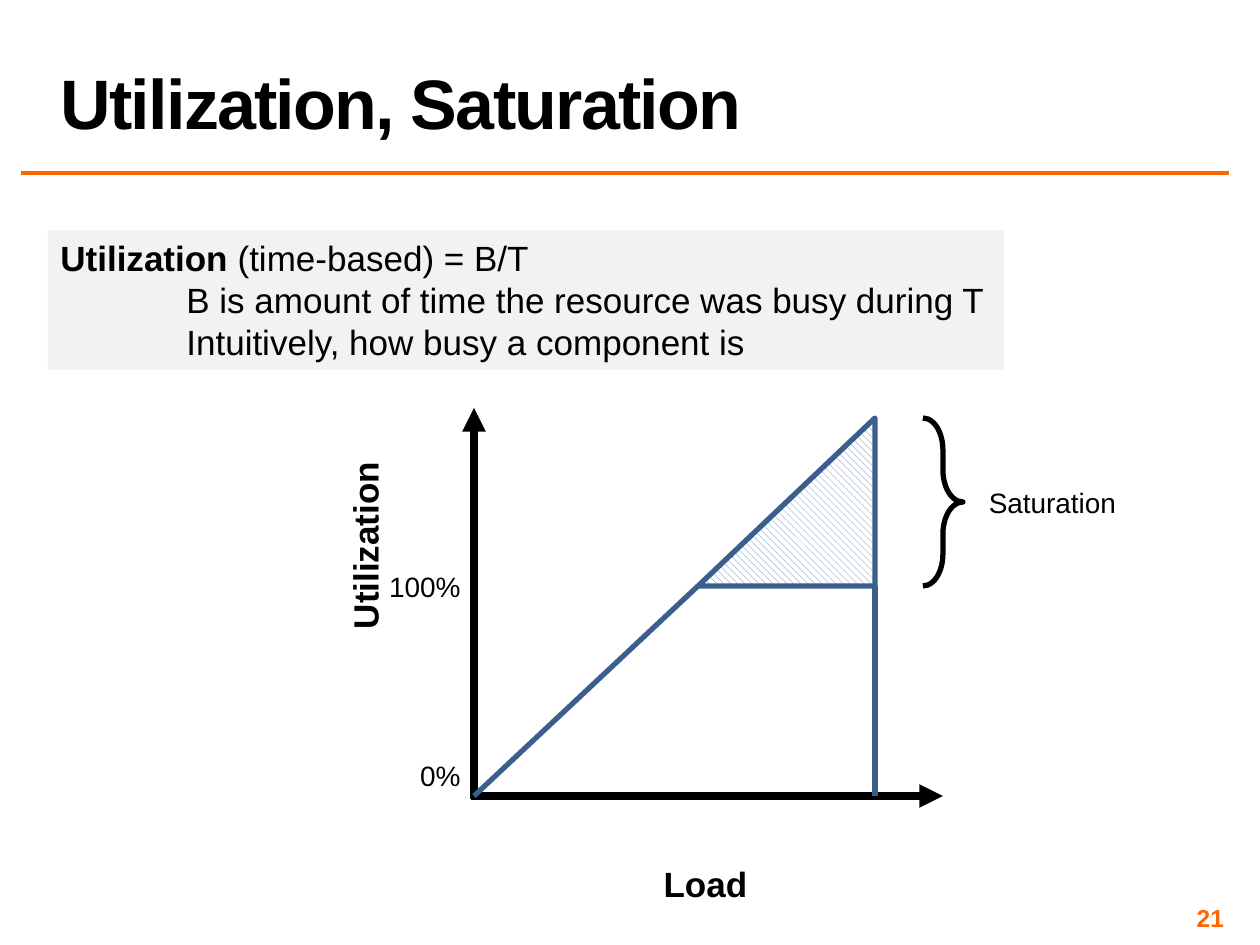
from lxml import etree
from pptx import Presentation
from pptx.dml.color import RGBColor
from pptx.enum.dml import MSO_PATTERN
from pptx.enum.shapes import MSO_CONNECTOR, MSO_SHAPE
from pptx.enum.text import MSO_ANCHOR, MSO_AUTO_SIZE, PP_ALIGN
from pptx.oxml.ns import qn
from pptx.util import Pt

PX = 914400 / 126
BLACK = RGBColor(0x00, 0x00, 0x00)
WHITE = RGBColor(0xFF, 0xFF, 0xFF)
ORANGE = RGBColor(0xFF, 0x66, 0x00)
BLUE = RGBColor(0x4F, 0x81, 0xBD)
DARK_BLUE = RGBColor(0x3A, 0x5F, 0x8C)
GRAY = RGBColor(0xF2, 0xF2, 0xF2)

presentation = Presentation()
presentation.slide_width = int(1260 * PX)
presentation.slide_height = int(945 * PX)
slide = presentation.slides.add_slide(presentation.slide_layouts[5])


def emu(*lengths):
    return [int(length * PX) for length in lengths]


def format_paragraph(paragraph, size, bold=False, color=BLACK, align=PP_ALIGN.LEFT):
    paragraph.alignment = align
    paragraph.font.name = "Arial"
    paragraph.font.size = Pt(size)
    paragraph.font.bold = bold
    paragraph.font.color.rgb = color


# Title
title = slide.shapes.title
title.left, title.top, title.width, title.height = emu(48, 2, 1181, 147)
title.text_frame.text = "Utilization, Saturation"
title.text_frame.vertical_anchor = MSO_ANCHOR.BOTTOM
title.text_frame.auto_size = MSO_AUTO_SIZE.NONE
title_paragraph = title.text_frame.paragraphs[0]
format_paragraph(title_paragraph, 40, bold=True)
title_paragraph.line_spacing = 0.8
title_paragraph.runs[0].font._element.set("spc", "-100")

# Title rule, axes and load lines
for start, end, color, width, arrow in (
    ((21, 173), (1229, 173), ORANGE, 2, False),
    ((474, 799), (474, 408), BLACK, 4.5, True),
    ((471, 796), (943, 796), BLACK, 4.5, True),
    ((474, 796), (698, 586), DARK_BLUE, 3, False),
    ((875, 796), (875, 586), DARK_BLUE, 3, False),
):
    connector = slide.shapes.add_connector(MSO_CONNECTOR.STRAIGHT, *emu(*start, *end))
    connector.line.color.rgb = color
    connector.line.width = Pt(width)
    if arrow:
        line = connector.line._get_or_add_ln()
        etree.SubElement(line, qn("a:tailEnd"), type="triangle")
    etree.SubElement(connector._element.spPr, qn("a:effectLst"))

# Saturation triangle and brace
triangle = slide.shapes.add_shape(MSO_SHAPE.ISOSCELES_TRIANGLE, *emu(698, 418, 177, 168))
triangle.adjustments[0] = 1
triangle.fill.patterned()
triangle.fill.pattern = MSO_PATTERN.WIDE_DOWNWARD_DIAGONAL
triangle.fill.fore_color.rgb = BLUE
triangle.fill.back_color.rgb = WHITE
triangle.line.color.rgb = DARK_BLUE

brace = slide.shapes.add_shape(MSO_SHAPE.LEFT_BRACE, *emu(923, 418, 40, 168))
brace.adjustments[0] = 0.8
brace._element.spPr.get_or_add_xfrm().set("flipH", "1")
brace.fill.background()
brace.line.color.rgb = BLACK

for shape in (triangle, brace):
    shape.line.width = Pt(3)
    shape.shadow.inherit = False

# Chart labels
for text, box, size, bold, align, rotation in (
    ("Utilization", (268, 518, 194, 55), 20, True, PP_ALIGN.CENTER, 270),
    ("Load", (651, 856, 109, 55), 20, True, PP_ALIGN.CENTER, 0),
    ("Saturation", (976, 479, 153, 47), 16, False, PP_ALIGN.CENTER, 0),
    ("100%", (375, 563, 98, 47), 16, False, PP_ALIGN.RIGHT, 0),
    ("0%", (406, 752, 67, 47), 16, False, PP_ALIGN.RIGHT, 0),
):
    label = slide.shapes.add_textbox(*emu(*box))
    label.rotation = rotation
    label.text_frame.text = text
    label.text_frame.word_wrap = False
    label.text_frame.auto_size = MSO_AUTO_SIZE.SHAPE_TO_FIT_TEXT
    format_paragraph(label.text_frame.paragraphs[0], size, bold, align=align)

# Definition
definition = slide.shapes.add_shape(MSO_SHAPE.RECTANGLE, *emu(48, 230, 956, 140))
definition.shadow.inherit = False
definition.fill.solid()
definition.fill.fore_color.rgb = GRAY
definition.line.fill.background()
frame = definition.text_frame
frame.word_wrap = False
frame.vertical_anchor = MSO_ANCHOR.TOP
frame.auto_size = MSO_AUTO_SIZE.SHAPE_TO_FIT_TEXT
frame.text = (
    "Utilization\n"
    "\tB is amount of time the resource was busy during T\n"
    "\tIntuitively, how busy a component is"
)
frame.paragraphs[0].runs[0].font.bold = True
frame.paragraphs[0].add_run().text = " (time-based) = B/T"
tab_position = str(emu(126)[0])
for paragraph in frame.paragraphs:
    format_paragraph(paragraph, 20)
    properties = paragraph._p.get_or_add_pPr()
    tab_list = etree.Element(qn("a:tabLst"))
    etree.SubElement(tab_list, qn("a:tab"), pos=tab_position, algn="l")
    properties.find(qn("a:defRPr")).addprevious(tab_list)

# Slide number
number = slide.shapes.add_textbox(*emu(935, 903, 294, 29))
frame = number.text_frame
frame.text = "21"
frame.word_wrap = True
frame.vertical_anchor = MSO_ANCHOR.MIDDLE
frame.margin_left, frame.margin_top, frame.margin_right, frame.margin_bottom = emu(5, 5, 5, 5)
format_paragraph(frame.paragraphs[0], 14, bold=True, color=ORANGE, align=PP_ALIGN.RIGHT)

presentation.save("out.pptx")
